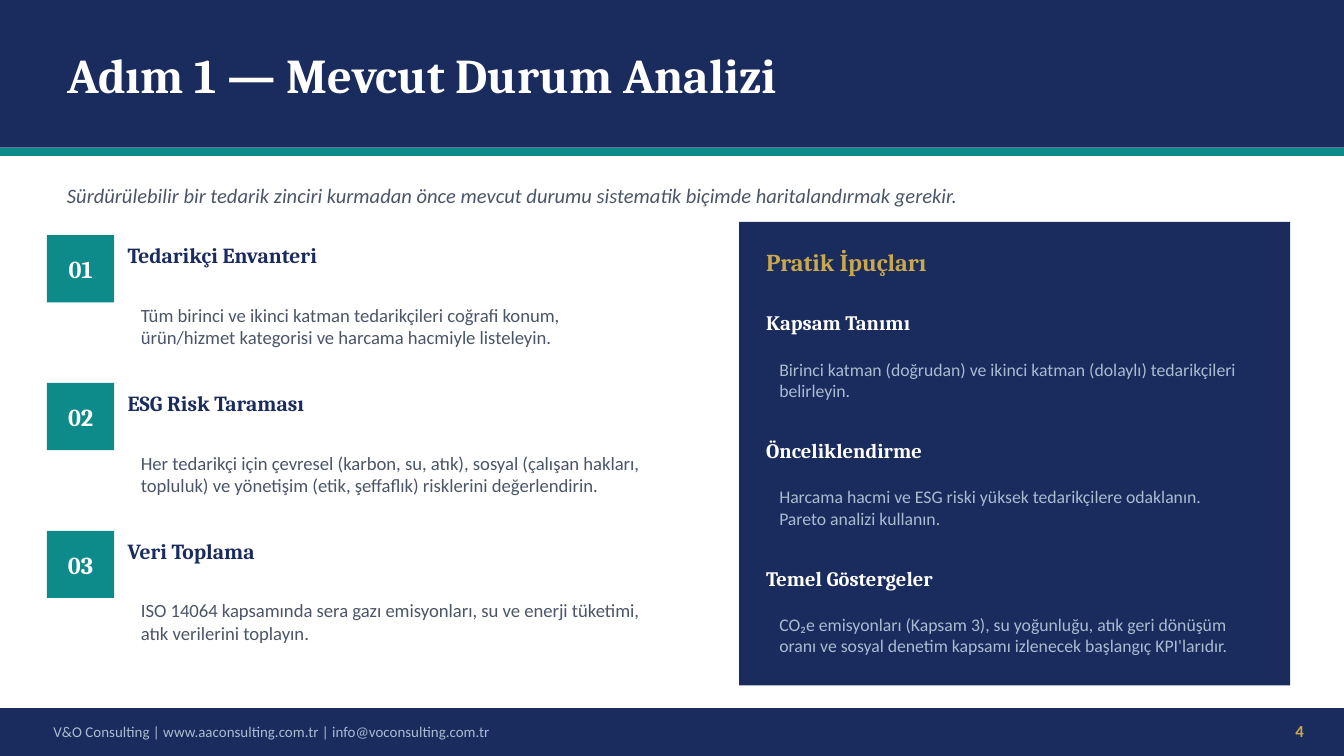
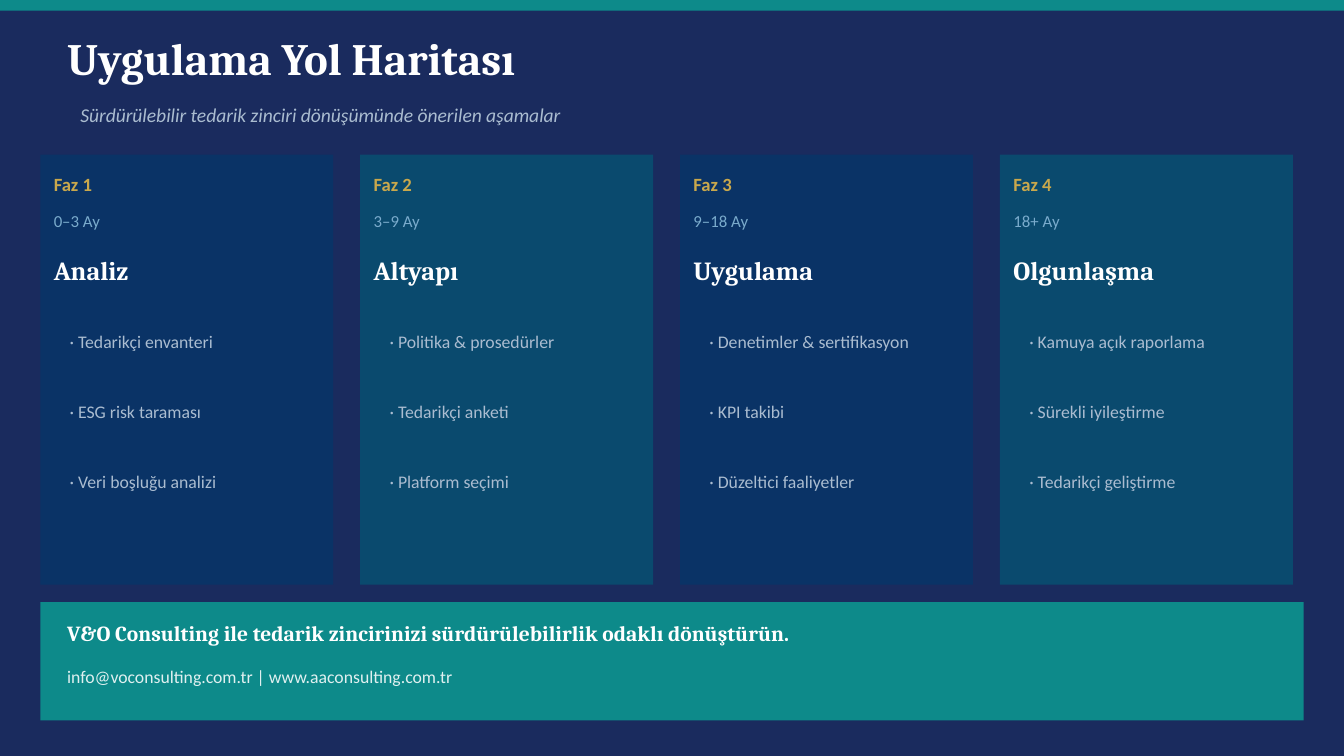
from pptx import Presentation
from pptx.dml.color import RGBColor
from pptx.enum.shapes import MSO_SHAPE
from pptx.enum.text import MSO_ANCHOR, MSO_AUTO_SIZE, PP_ALIGN
from pptx.util import Pt

RECTANGLE = MSO_SHAPE.RECTANGLE
MIDDLE = MSO_ANCHOR.MIDDLE
NO_AUTOFIT = MSO_AUTO_SIZE.NONE
LEFT, CENTER, RIGHT = PP_ALIGN.LEFT, PP_ALIGN.CENTER, PP_ALIGN.RIGHT

NAVY = RGBColor(0x1A, 0x2B, 0x5E)
TEAL = RGBColor(0x0D, 0x8A, 0x8A)
GOLD = RGBColor(0xC9, 0xA8, 0x4C)
WHITE = RGBColor(0xFF, 0xFF, 0xFF)
GRAY = RGBColor(0x4A, 0x55, 0x68)
MIST = RGBColor(0xAA, 0xBC, 0xD0)
SKY = RGBColor(0x7A, 0xAB, 0xCC)
PALE_TEAL = RGBColor(0xE0, 0xF0, 0xF0)
CARD_BLUE = RGBColor(0x0A, 0x33, 0x66)
CARD_TEAL = RGBColor(0x0A, 0x4A, 0x6E)

HEADING_FONT = "Cambria"
BODY_FONT = "Calibri"
SLIDE_WIDTH, SLIDE_HEIGHT = 720, 405
TITLE_ONLY = 5

COMPANY = "V&O Consulting"
EMAIL = "info@voconsulting.com.tr"
WEBSITE = "www.aaconsulting.com.tr"

STEPS = [
    ("Tedarikçi Envanteri",
     "Tüm birinci ve ikinci katman tedarikçileri coğrafi konum, "
     "ürün/hizmet kategorisi ve harcama hacmiyle listeleyin."),
    ("ESG Risk Taraması",
     "Her tedarikçi için çevresel (karbon, su, atık), sosyal (çalışan hakları, "
     "topluluk) ve yönetişim (etik, şeffaflık) risklerini değerlendirin."),
    ("Veri Toplama",
     "ISO 14064 kapsamında sera gazı emisyonları, su ve enerji tüketimi, "
     "atık verilerini toplayın."),
]
TIPS = [
    ("Kapsam Tanımı",
     "Birinci katman (doğrudan) ve ikinci katman (dolaylı) tedarikçileri belirleyin."),
    ("Önceliklendirme",
     "Harcama hacmi ve ESG riski yüksek tedarikçilere odaklanın. "
     "Pareto analizi kullanın."),
    ("Temel Göstergeler",
     "CO₂e emisyonları (Kapsam 3), su yoğunluğu, atık geri dönüşüm oranı ve "
     "sosyal denetim kapsamı izlenecek başlangıç KPI'larıdır."),
]
PHASES = [
    ("0–3 Ay", "Analiz",
     ["Tedarikçi envanteri", "ESG risk taraması", "Veri boşluğu analizi"]),
    ("3–9 Ay", "Altyapı",
     ["Politika & prosedürler", "Tedarikçi anketi", "Platform seçimi"]),
    ("9–18 Ay", "Uygulama",
     ["Denetimler & sertifikasyon", "KPI takibi", "Düzeltici faaliyetler"]),
    ("18+ Ay", "Olgunlaşma",
     ["Kamuya açık raporlama", "Sürekli iyileştirme", "Tedarikçi geliştirme"]),
]


class Deck:
    """Holds the shared style and draws on the current slide, in points."""

    def __init__(self):
        self.presentation = Presentation()
        self.presentation.slide_width = Pt(SLIDE_WIDTH)
        self.presentation.slide_height = Pt(SLIDE_HEIGHT)
        self.slide = None

    def new_slide(self, background):
        layout = self.presentation.slide_layouts[TITLE_ONLY]
        self.slide = self.presentation.slides.add_slide(layout)
        fill = self.slide.background.fill
        fill.solid()
        fill.fore_color.rgb = background

    def set_text(self, shape, text, size, color, font=BODY_FONT, bold=False,
                 italic=False, align=LEFT, padded=False):
        frame = shape.text_frame
        frame.word_wrap = True
        frame.auto_size = NO_AUTOFIT
        frame.vertical_anchor = MIDDLE
        if not padded:
            frame.margin_left = frame.margin_right = Pt(0)
            frame.margin_top = frame.margin_bottom = Pt(0)
        frame.text = text
        paragraph = frame.paragraphs[0]
        paragraph.alignment = align
        paragraph.font.name = font
        paragraph.font.size = Pt(size)
        paragraph.font.bold = bold
        paragraph.font.italic = italic
        paragraph.font.color.rgb = color

    def title(self, text, top, height, size):
        """Fills the title placeholder and brings it in front of the bands."""
        title = self.slide.shapes.title
        title.left, title.top = Pt(36), Pt(top)
        title.width, title.height = Pt(648), Pt(height)
        self.set_text(title, text, size, WHITE, HEADING_FONT, bold=True)
        title.element.getparent().append(title.element)

    def block(self, left, top, width, height, color):
        shape = self.slide.shapes.add_shape(
            RECTANGLE, Pt(left), Pt(top), Pt(width), Pt(height))
        shape.shadow.inherit = False
        shape.fill.solid()
        shape.fill.fore_color.rgb = color
        shape.line.fill.background()
        return shape

    def text(self, left, top, width, height, text, size, color, **style):
        box = self.slide.shapes.add_textbox(
            Pt(left), Pt(top), Pt(width), Pt(height))
        self.set_text(box, text, size, color, **style)

    def heading(self, left, top, width, height, text, size, color):
        self.text(left, top, width, height, text, size, color,
                  font=HEADING_FONT, bold=True)

    def body(self, left, top, width, height, text, size, color, **style):
        self.text(left, top, width, height, text, size, color, padded=True, **style)

    def footer(self, page):
        self.block(0, 379.44, SLIDE_WIDTH, 25.92, NAVY)
        self.body(21.6, 380.88, 612, 21.6,
                  f"{COMPANY} | {WEBSITE} | {EMAIL}", 8, MIST)
        self.body(669.6, 380.88, 36, 21.6, str(page), 9, GOLD,
                  bold=True, align=RIGHT)


def add_analysis_slide(deck):
    deck.new_slide(WHITE)
    deck.block(0, 0, SLIDE_WIDTH, 79.2, NAVY)
    deck.block(0, 79.2, SLIDE_WIDTH, 4.32, TEAL)
    deck.title("Adım 1 — Mevcut Durum Analizi", 7.2, 64.8, 26)
    deck.body(28.8, 86.4, 662.4, 36,
              "Sürdürülebilir bir tedarik zinciri kurmadan önce mevcut durumu "
              "sistematik biçimde haritalandırmak gerekir.", 11, GRAY, italic=True)

    for index, (name, description) in enumerate(STEPS):
        top = 126 + 79.2 * index
        badge = deck.block(25.2, top, 36, 36, TEAL)
        deck.set_text(badge, f"{index + 1:02}", 13, WHITE, HEADING_FONT,
                      bold=True, align=CENTER)
        deck.heading(68.4, top, 288, 21.6, name, 11.5, NAVY)
        deck.body(68.4, top + 21.6, 288, 54, description, 10, GRAY)

    deck.block(396, 118.8, 295.2, 248.4, NAVY)
    deck.heading(410.4, 126, 266.4, 28.8, "Pratik İpuçları", 13, GOLD)
    for index, (name, description) in enumerate(TIPS):
        top = 162 + 68.4 * index
        deck.heading(410.4, top, 266.4, 21.6, name, 11, WHITE)
        deck.body(410.4, top + 21.6, 266.4, 39.6, description, 9.5, MIST)
    deck.footer(4)


def add_roadmap_slide(deck):
    deck.new_slide(NAVY)
    deck.block(0, 0, SLIDE_WIDTH, 5.76, TEAL)
    deck.title("Uygulama Yol Haritası", 10.8, 39.6, 24)
    deck.body(36, 48.96, 648, 25.2,
              "Sürdürülebilir tedarik zinciri dönüşümünde önerilen aşamalar",
              10.5, MIST, italic=True)

    card_width, gap = 156.96, 14.4
    for index, (period, name, tasks) in enumerate(PHASES):
        card_left = 21.6 + index * (card_width + gap)
        left, width = card_left + 7.2, card_width - 14.4
        color = CARD_TEAL if index % 2 else CARD_BLUE
        deck.block(card_left, 82.8, card_width, 230.4, color)
        deck.text(left, 87.84, width, 21.6, f"Faz {index + 1}", 10, GOLD, bold=True)
        deck.text(left, 108, width, 20.16, period, 9, SKY)
        deck.heading(left, 131.04, width, 27.36, name, 14, WHITE)
        for row, task in enumerate(tasks):
            deck.body(left + 1.44, 165.6 + 37.44 * row, 140.4, 34.56,
                      f"· {task}", 9.5, MIST)

    deck.block(21.6, 322.56, 676.8, 63.36, TEAL)
    deck.heading(36, 325.44, 504, 27.36,
                 f"{COMPANY} ile tedarik zincirinizi sürdürülebilirlik odaklı "
                 "dönüştürün.", 11.5, WHITE)
    deck.text(36, 351.36, 504, 21.6, f"{EMAIL} | {WEBSITE}", 9.5, PALE_TEAL)


def main():
    deck = Deck()
    add_analysis_slide(deck)
    add_roadmap_slide(deck)
    deck.presentation.save("out.pptx")


if __name__ == "__main__":
    main()
